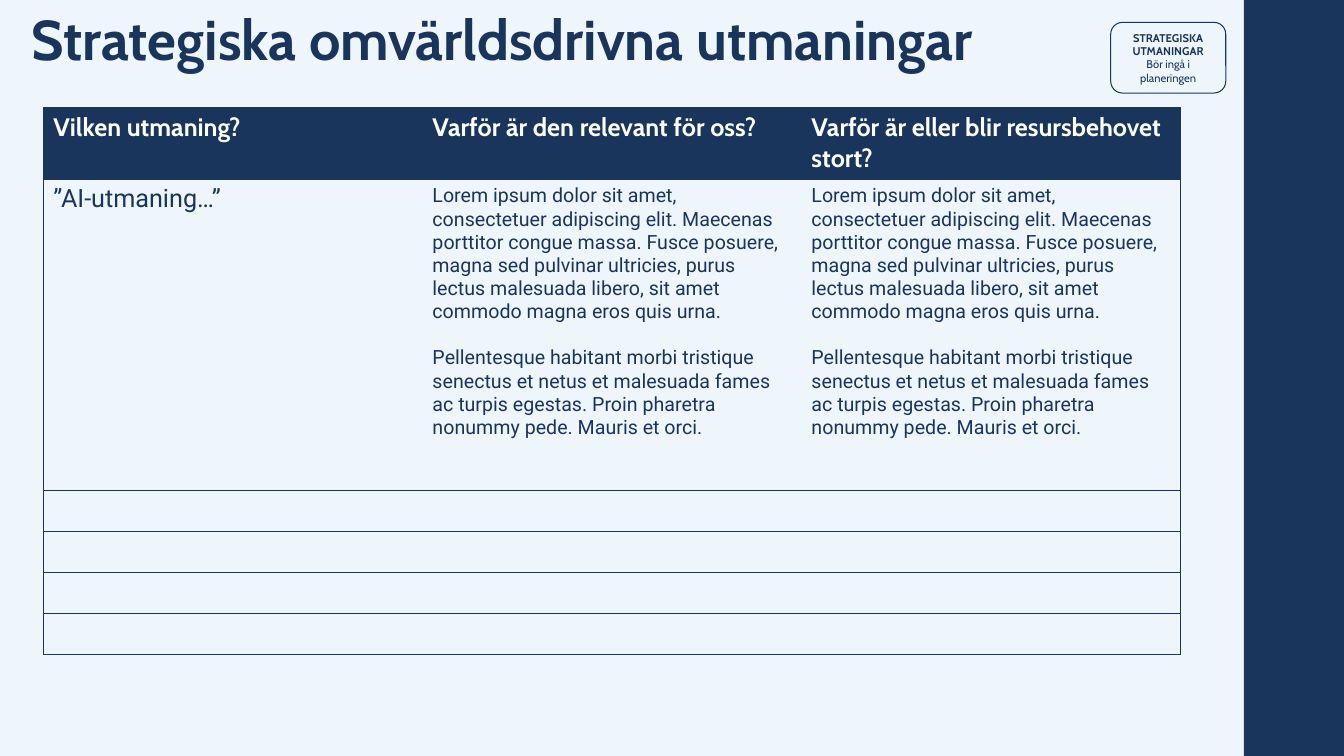
from dataclasses import dataclass

from lxml.etree import SubElement
from pptx import Presentation
from pptx.dml.color import RGBColor as Rgb
from pptx.enum.shapes import MSO_SHAPE as Shape
from pptx.enum.text import MSO_ANCHOR as Anchor, MSO_AUTO_SIZE as AutoSize, PP_ALIGN as Align
from pptx.oxml.ns import qn
from pptx.util import Pt


@dataclass(frozen=True)
class Theme:
    navy: str = "1A355C"
    pale: str = "EEF5FB"
    white: str = "FEFFFF"
    heading: str = "Cabin"
    body: str = "Roboto"
    title_size: float = 40
    large: float = 18
    medium: float = 14
    small: float = 8
    border: float = 0.5
    outline: float = 0.75
    paragraph_gap: float = 16.4


class SlideBuilder:
    """Draws styled elements on one slide."""

    def __init__(self, slide, theme):
        self.slide = slide
        self.theme = theme
        slide.background.fill.solid()
        slide.background.fill.fore_color.rgb = Rgb.from_string(theme.pale)

    def format_runs(self, paragraph, size, face, color, bold=False):
        for run in paragraph.runs:
            run.font.size = Pt(size)
            run.font.name = face
            run.font.bold = bold
            run.font.color.rgb = Rgb.from_string(color)

    def title(self, text, left, top, width, height):
        title = self.slide.shapes.title
        title.left, title.top, title.width, title.height = map(Pt, (left, top, width, height))
        frame = title.text_frame
        frame.text = text
        frame.word_wrap = True
        frame.auto_size = AutoSize.NONE
        frame.vertical_anchor = Anchor.TOP
        frame.margin_left = frame.margin_right = frame.margin_top = frame.margin_bottom = 0
        heading = frame.paragraphs[0]
        heading.alignment = Align.LEFT
        heading.line_spacing = 0.9
        self.format_runs(heading, self.theme.title_size, self.theme.heading, self.theme.navy, True)

    def sidebar(self, left, top, width, height):
        sidebar = self.slide.shapes.add_shape(Shape.RECTANGLE, *map(Pt, (left, top, width, height)))
        sidebar.shadow.inherit = False
        sidebar.fill.solid()
        sidebar.fill.fore_color.rgb = Rgb.from_string(self.theme.navy)
        sidebar.line.fill.background()

    def badge(self, label, note, left, top, width, height):
        badge = self.slide.shapes.add_shape(
            Shape.ROUNDED_RECTANGLE, *map(Pt, (left, top, width, height)))
        badge.shadow.inherit = False
        badge.fill.background()
        badge.line.color.rgb = Rgb.from_string(self.theme.navy)
        badge.line.width = Pt(self.theme.outline)
        frame = badge.text_frame
        frame.text = f"{label}\n{note}"
        frame.word_wrap = True
        frame.vertical_anchor = Anchor.MIDDLE
        for paragraph, bold in zip(frame.paragraphs, (True, False)):
            paragraph.alignment = Align.CENTER
            self.format_runs(paragraph, self.theme.small, self.theme.heading, self.theme.navy, bold)

    def border(self, cell, side, visible):
        properties = cell._tc.get_or_add_tcPr()
        line = SubElement(properties, qn(f"a:ln{side}"), w=str(Pt(self.theme.border)))
        if visible:
            fill = SubElement(line, qn("a:solidFill"))
            SubElement(fill, qn("a:srgbClr"), val=self.theme.navy)
        else:
            SubElement(line, qn("a:noFill"))

    def cell(self, cell, text, is_header, is_first, is_last):
        theme = self.theme
        for side, visible in (("L", is_first), ("R", is_last), ("T", True), ("B", True)):
            self.border(cell, side, visible)
        if is_header:
            cell.fill.solid()
            cell.fill.fore_color.rgb = Rgb.from_string(theme.navy)
            style = (theme.large, theme.heading, theme.white, True)
        else:
            cell.fill.background()
            style = (theme.large if is_first else theme.medium, theme.body, theme.navy)
        if not text:
            return
        cell.text_frame.text = text
        for index, paragraph in enumerate(cell.text_frame.paragraphs):
            if index:
                paragraph.space_before = Pt(theme.paragraph_gap)
            self.format_runs(paragraph, *style)

    def table(self, rows, heights, left, top, width):
        columns = len(rows[0])
        table = self.slide.shapes.add_table(
            len(rows), columns, *map(Pt, (left, top, width, sum(heights)))).table
        table.first_row = table.horz_banding = False
        for column in table.columns:
            column.width = Pt(width / columns)
        for row_index, (texts, height) in enumerate(zip(rows, heights)):
            table.rows[row_index].height = Pt(height)
            for column_index, text in enumerate(texts):
                self.cell(table.cell(row_index, column_index), text,
                          row_index == 0, column_index == 0, column_index == columns - 1)


HEADERS = ["Vilken utmaning?", "Varför är den relevant för oss?",
           "Varför är eller blir resursbehovet stort?"]
EXPLANATION = (
    "Lorem ipsum dolor sit amet, consectetuer adipiscing elit. Maecenas porttitor congue massa. "
    "Fusce posuere, magna sed pulvinar ultricies, purus lectus malesuada libero, sit amet commodo "
    "magna eros quis urna.\n"
    "Pellentesque habitant morbi tristique senectus et netus et malesuada fames ac turpis egestas. "
    "Proin pharetra nonummy pede. Mauris et orci."
)
EMPTY_ROWS = 4


def main():
    presentation = Presentation()
    presentation.slide_width, presentation.slide_height = Pt(960), Pt(540)
    slide = presentation.slides.add_slide(presentation.slide_layouts[5])
    builder = SlideBuilder(slide, Theme())
    builder.sidebar(888.5, 0, 71.5, 540)
    challenges = [HEADERS, ["”AI-utmaning…”", EXPLANATION, EXPLANATION]]
    challenges += [[""] * len(HEADERS)] * EMPTY_ROWS
    builder.table(challenges, [51.5, 222] + [29.3] * EMPTY_ROWS, 31, 76.8, 812.2)
    builder.badge("STRATEGISKA UTMANINGAR", "Bör ingå i planeringen", 793.4, 16, 82.2, 50.5)
    builder.title("Strategiska omvärldsdrivna utmaningar", 22.5, 8.6, 754, 65.5)
    presentation.save("out.pptx")


if __name__ == "__main__":
    main()
